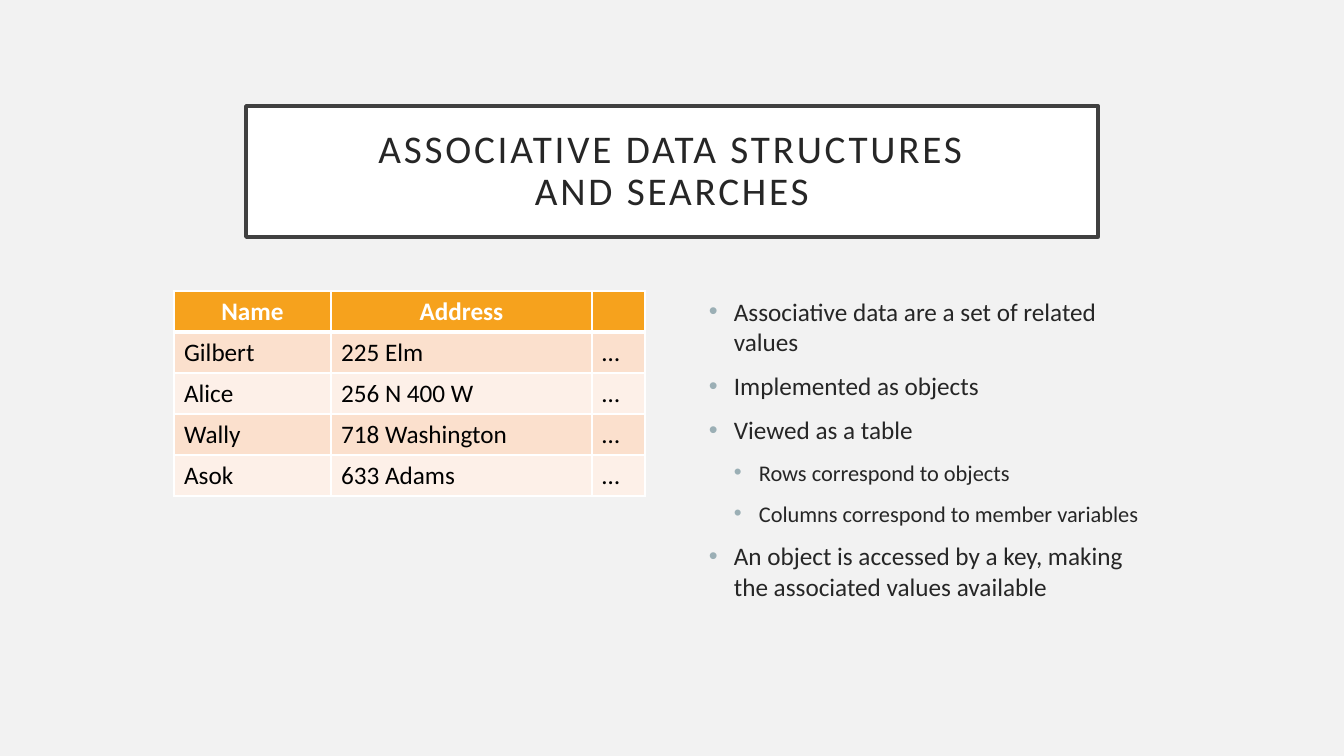
from dataclasses import dataclass

from lxml import etree
from pptx import Presentation
from pptx.dml.color import RGBColor
from pptx.enum.shapes import MSO_SHAPE
from pptx.enum.text import MSO_ANCHOR, PP_ALIGN
from pptx.oxml.ns import qn
from pptx.util import Pt

RECT = MSO_SHAPE.RECTANGLE
MIDDLE = MSO_ANCHOR.MIDDLE
CENTER, LEFT = PP_ALIGN.CENTER, PP_ALIGN.LEFT
PX_PER_INCH = 100.8


@dataclass(frozen=True)
class Theme:
    font: str = "Calibri"
    background: str = "F2F2F2"
    white: str = "FFFFFF"
    frame: str = "404040"
    text: str = "262626"
    bullet: str = "9BAFB5"
    header: str = "F6A21D"
    bands: tuple = ("FBE0CD", "FDF0E8")
    cell_text: str = "000000"
    title_size: int = 28
    body_sizes: tuple = (18, 16)
    table_size: int = 18


THEME = Theme()

TITLE = "ASSOCIATIVE DATA STRUCTURES\vAND SEARCHES"
RECORDS = [
    ("Name", "Address", ""),
    ("Gilbert", "225 Elm", "…"),
    ("Alice", "256 N 400 W", "…"),
    ("Wally", "718 Washington", "…"),
    ("Asok", "633 Adams", "…"),
]
POINTS = [
    (0, "Associative data are a set of related values"),
    (0, "Implemented as objects"),
    (0, "Viewed as a table"),
    (1, "Rows correspond to objects"),
    (1, "Columns correspond to member variables"),
    (0, "An object is accessed by a key, making the associated values available"),
]


def px(n):
    return round(n * 914400 / PX_PER_INCH)


def rgb(color):
    return RGBColor.from_string(color)


def paint(fill, color):
    fill.solid()
    fill.fore_color.rgb = rgb(color)


def style_runs(p, size, color, bold=False):
    for r in p.runs:
        r.font.name = THEME.font
        r.font.size = Pt(size)
        r.font.bold = bold
        r.font.color.rgb = rgb(color)


def add_title(s, text, x, y, w, h):
    sp = s.shapes.add_shape(RECT, px(x), px(y), px(w), px(h))
    sp.shadow.inherit = False
    paint(sp.fill, THEME.white)
    sp.line.color.rgb = rgb(THEME.frame)
    sp.line.width = Pt(2.5)
    tf = sp.text_frame
    tf.word_wrap = True
    tf.vertical_anchor = MIDDLE
    tf.margin_left = tf.margin_right = tf.margin_top = tf.margin_bottom = px(20)
    p = tf.paragraphs[0]
    p.text = text
    p.alignment = CENTER
    p.line_spacing = 0.9
    style_runs(p, THEME.title_size, THEME.text)
    # Letter spacing, in hundredths of a point
    for r in p.runs:
        r.font._element.set("spc", "200")


def set_borders(cell, top, bottom):
    tcPr = cell._tc.get_or_add_tcPr()
    for side, width in (("L", 1), ("R", 1), ("T", top), ("B", bottom)):
        ln = etree.SubElement(tcPr, qn(f"a:ln{side}"), w=str(Pt(width)))
        fill = etree.SubElement(ln, qn("a:solidFill"))
        etree.SubElement(fill, qn("a:srgbClr"), val=THEME.white)


def add_records_table(s, records, x, y, col_widths, row_height):
    shape = s.shapes.add_table(
        len(records), len(col_widths), px(x), px(y),
        px(sum(col_widths)), px(row_height * len(records)))
    table = shape.table
    for column, width in zip(table.columns, col_widths):
        column.width = px(width)
    for i, record in enumerate(records):
        table.rows[i].height = px(row_height)
        is_header = i == 0
        for j, value in enumerate(record):
            cell = table.cell(i, j)
            # A thick rule separates the header from the records
            set_borders(cell, 3 if i == 1 else 1, 3 if is_header else 1)
            paint(cell.fill, THEME.header if is_header else THEME.bands[(i - 1) % 2])
            p = cell.text_frame.paragraphs[0]
            p.text = value
            p.alignment = CENTER if is_header else LEFT
            style_runs(p, THEME.table_size,
                       THEME.white if is_header else THEME.cell_text, is_header)


def set_bullet(p, level, indent):
    pPr = p._p.get_or_add_pPr()
    pPr.set("marL", str(px(indent * (level + 1))))
    pPr.set("indent", str(-px(indent)))
    color = etree.SubElement(pPr, qn("a:buClr"))
    etree.SubElement(color, qn("a:srgbClr"), val=THEME.bullet)
    etree.SubElement(pPr, qn("a:buFont"), typeface="Arial")
    etree.SubElement(pPr, qn("a:buChar"), char="•")


def add_bullets(s, points, x, y, w, h):
    tf = s.shapes.add_textbox(px(x), px(y), px(w), px(h)).text_frame
    tf.word_wrap = True
    for i, (level, text) in enumerate(points):
        p = tf.add_paragraph() if i else tf.paragraphs[0]
        p.text = text
        p.level = level
        p.space_before = Pt(10)
        set_bullet(p, level, 25)
        style_runs(p, THEME.body_sizes[level], THEME.text)


def main():
    prs = Presentation()
    prs.slide_width, prs.slide_height = px(1344), px(756)
    s = prs.slides.add_slide(prs.slide_layouts[6])
    paint(s.background.fill, THEME.background)

    # Framed title
    add_title(s, TITLE, 246, 106, 852, 131)
    # Sample data on the left, explanation on the right
    add_records_table(s, RECORDS, 174, 291, (157, 261, 53), 41)
    add_bullets(s, POINTS, 699, 291, 471, 342)

    prs.save("out.pptx")


if __name__ == "__main__":
    main()
